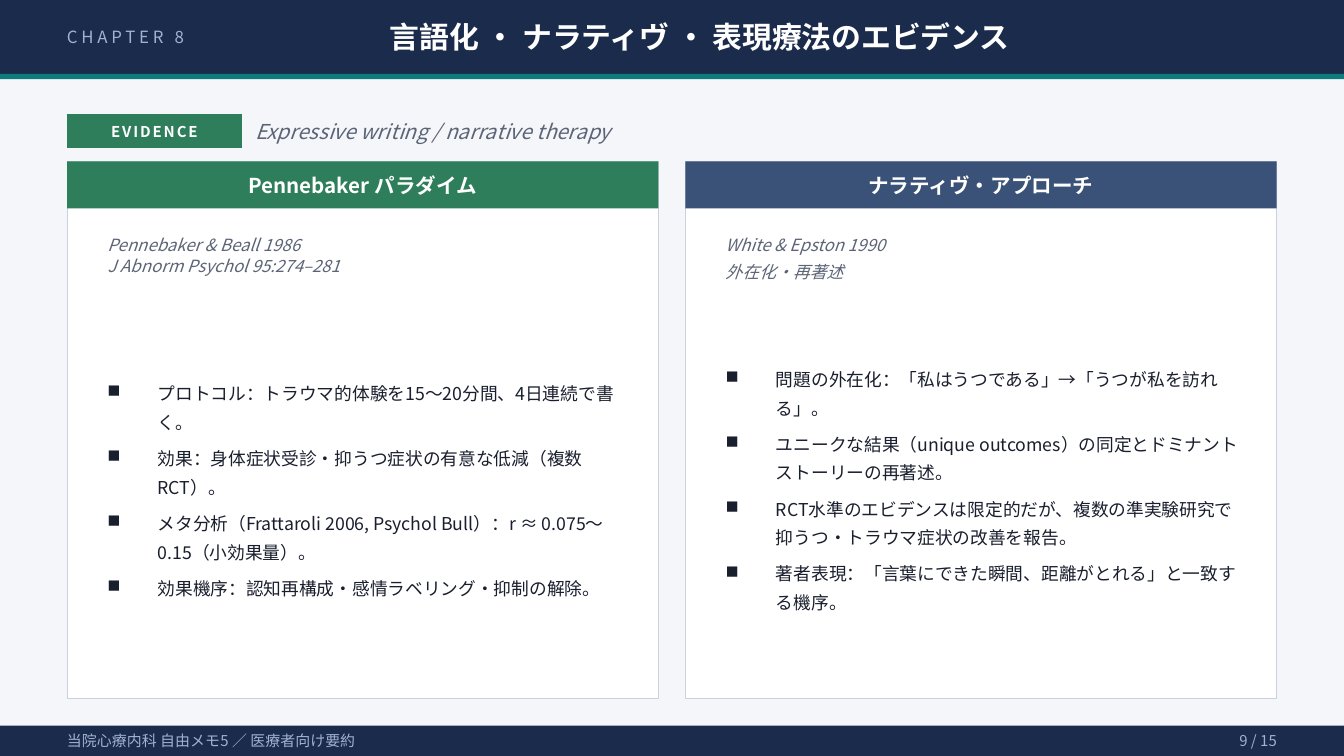
from dataclasses import dataclass

from lxml import etree
from pptx import Presentation
from pptx.dml.color import RGBColor
from pptx.enum.shapes import MSO_SHAPE
from pptx.enum.text import MSO_ANCHOR, MSO_AUTO_SIZE, PP_ALIGN
from pptx.oxml.ns import qn
from pptx.util import Pt

RECT = MSO_SHAPE.RECTANGLE
MIDDLE = MSO_ANCHOR.MIDDLE
FIXED = MSO_AUTO_SIZE.NONE
LEFT, CENTER, RIGHT = PP_ALIGN.LEFT, PP_ALIGN.CENTER, PP_ALIGN.RIGHT


@dataclass(frozen=True)
class Theme:
    font: str = "Noto Sans CJK JP"
    page: str = "F4F6FA"
    navy: str = "1B2B4B"
    teal: str = "0E7C7B"
    green: str = "2E7D5B"
    blue: str = "3B5278"
    pale: str = "9FB3D1"
    gray: str = "5C6577"
    ink: str = "1A1F2E"
    white: str = "FFFFFF"
    edge: str = "C9D1DE"
    title: float = 16
    head: float = 11
    body: float = 9.5
    note: float = 9
    small: float = 8


THEME = Theme()
WIDTH, HEIGHT = 720, 405
CARD_W, CARD_GAP, CARD_X, CARD_Y = 316.8, 14.4, 36, 86.4

CARDS = [
    (THEME.green, "Pennebaker パラダイム",
     ["Pennebaker & Beall 1986", "J Abnorm Psychol 95:274–281"], None,
     ["プロトコル：トラウマ的体験を15〜20分間、4日連続で書く。",
      "効果：身体症状受診・抑うつ症状の有意な低減（複数RCT）。",
      "メタ分析（Frattaroli 2006, Psychol Bull）：r ≈ 0.075〜0.15（小効果量）。",
      "効果機序：認知再構成・感情ラベリング・抑制の解除。"]),
    (THEME.blue, "ナラティヴ・アプローチ",
     ["White & Epston 1990", "外在化・再著述"], 1.3,
     ["問題の外在化：「私はうつである」→「うつが私を訪れる」。",
      "ユニークな結果（unique outcomes）の同定とドミナントストーリーの再著述。",
      "RCT水準のエビデンスは限定的だが、複数の準実験研究で抑うつ・トラウマ症状の改善を報告。",
      "著者表現：「言葉にできた瞬間、距離がとれる」と一致する機序。"]),
]


def color(code):
    return RGBColor.from_string(code)


def add_bullet(para):
    props = para._p.get_or_add_pPr()
    props.set("marL", str(Pt(27)))
    props.set("indent", str(-Pt(27)))
    etree.SubElement(props, qn("a:buChar")).set("char", "■")


def write(shape, lines, size, ink, align=LEFT, bold=False, italic=False,
          track=0, lead=None, after=None, bullet=False, inset=True):
    """Fill a shape with one paragraph per line, all in the same style."""
    frame = shape.text_frame
    frame.word_wrap = True
    frame.auto_size = FIXED
    frame.vertical_anchor = MIDDLE
    if not inset:
        frame.margin_left = frame.margin_right = 0
        frame.margin_top = frame.margin_bottom = 0
    for i, line in enumerate(lines):
        para = frame.add_paragraph() if i else frame.paragraphs[0]
        run = para.add_run()
        run.text = line
        if track:
            run._r.get_or_add_rPr().set("spc", str(track * 100))
        if bullet:
            add_bullet(para)
        para.alignment = align
        para.line_spacing = lead
        if after is not None:
            para.space_after = Pt(after)
        font = para.font
        font.name, font.size = THEME.font, Pt(size)
        font.bold, font.italic = bold, italic
        font.color.rgb = color(ink)
        base = para._p.pPr.find(qn("a:defRPr"))
        etree.SubElement(base, qn("a:ea")).set("typeface", THEME.font)


def add_rect(slide, x, y, w, h, fill, edge=None):
    rect = slide.shapes.add_shape(RECT, Pt(x), Pt(y), Pt(w), Pt(h))
    rect.shadow.inherit = False
    rect.fill.solid()
    rect.fill.fore_color.rgb = color(fill)
    if edge:
        rect.line.color.rgb = color(edge)
        rect.line.width = Pt(0.5)
    else:
        rect.line.fill.background()
    return rect


def add_text(slide, x, y, w, h, lines, size, ink, **style):
    box = slide.shapes.add_textbox(Pt(x), Pt(y), Pt(w), Pt(h))
    write(box, lines, size, ink, **style)


def add_title(slide, text):
    title = slide.shapes.title
    title.left, title.top = Pt(208.8), Pt(3.6)
    title.width, title.height = Pt(496.8), Pt(32.4)
    write(title, [text], THEME.title, THEME.white, bold=True, inset=False)
    # The placeholder comes first in the tree; lift it above the bar.
    slide.shapes._spTree.append(title._element)


def add_header(slide):
    add_rect(slide, 0, 0, WIDTH, 39.6, THEME.navy)
    add_rect(slide, 0, 39.6, WIDTH, 2.88, THEME.teal)
    add_text(slide, 28.8, 3.6, 180, 32.4, ["CHAPTER 8"],
             THEME.note, THEME.pale, track=2)
    add_title(slide, "言語化 ・ ナラティヴ ・ 表現療法のエビデンス")


def add_tag(slide):
    tag = add_rect(slide, CARD_X, 61.2, 93.6, 18, THEME.green)
    write(tag, ["EVIDENCE"], THEME.small, THEME.white,
          align=CENTER, bold=True, track=1)
    add_text(slide, 136.8, 61.2, 504, 18,
             ["Expressive writing / narrative therapy"],
             THEME.head, THEME.gray, italic=True, inset=False)


def add_card(slide, x, fill, head, source, lead, points):
    add_rect(slide, x, CARD_Y, CARD_W, 288, THEME.white, THEME.edge)
    band = add_rect(slide, x, CARD_Y, CARD_W, 25.2, fill)
    write(band, [head], THEME.head, THEME.white, align=CENTER, bold=True)
    add_text(slide, x + 14.4, 118.8, 288, 36, source,
             THEME.note, THEME.gray, italic=True, lead=lead)
    add_text(slide, x + 14.4, 158.4, 291.6, 205.2, points,
             THEME.body, THEME.ink, lead=1.35, after=4, bullet=True)


def add_footer(slide):
    top, high = 388.8, 16.2
    add_rect(slide, 0, top, WIDTH, high, THEME.navy)
    add_text(slide, 28.8, top, 432, high,
             ["当院心療内科 自由メモ5 ／ 医療者向け要約"], THEME.small, THEME.pale)
    add_text(slide, 633.6, top, 57.6, high, ["9 / 15"],
             THEME.small, THEME.pale, align=RIGHT)


def main():
    deck = Presentation()
    deck.slide_width, deck.slide_height = Pt(WIDTH), Pt(HEIGHT)
    slide = deck.slides.add_slide(deck.slide_layouts[5])
    slide.background.fill.solid()
    slide.background.fill.fore_color.rgb = color(THEME.page)
    add_header(slide)
    add_tag(slide)
    for i, card in enumerate(CARDS):
        add_card(slide, CARD_X + i * (CARD_W + CARD_GAP), *card)
    add_footer(slide)
    deck.save("out.pptx")


if __name__ == "__main__":
    main()
